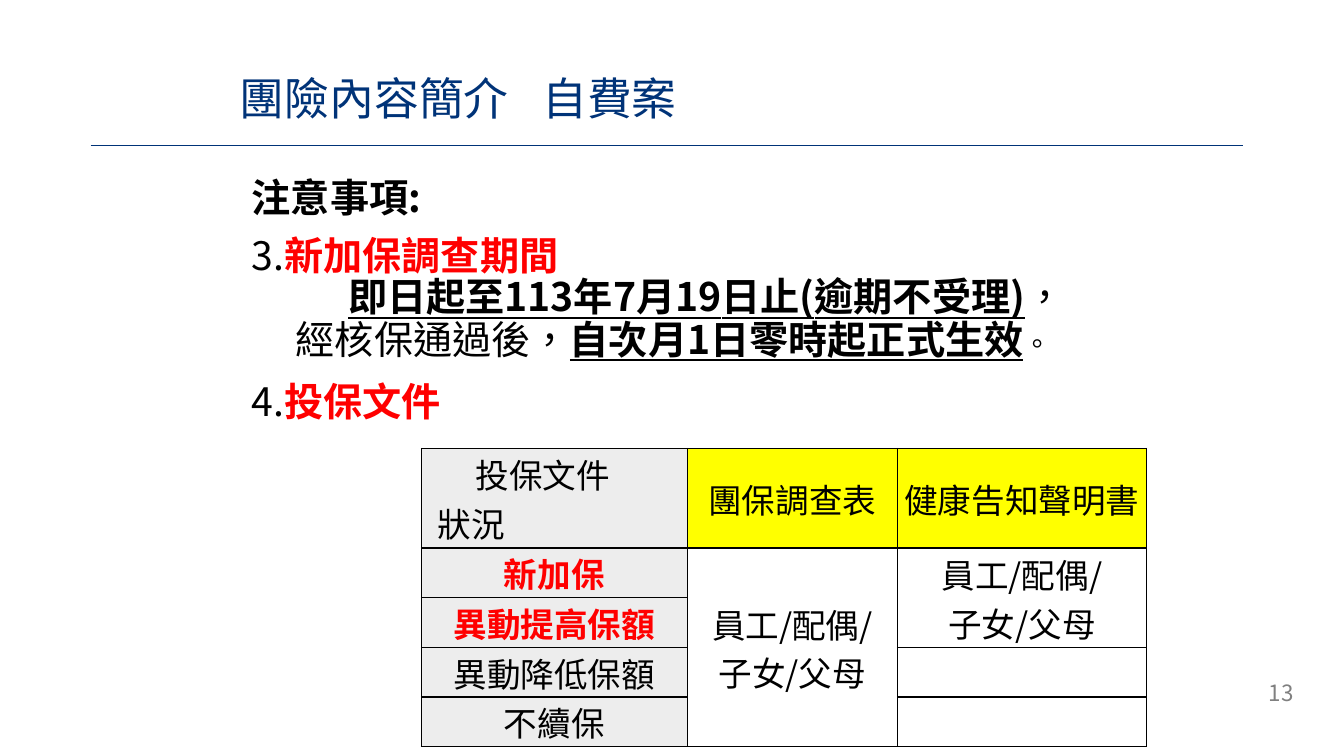
from dataclasses import dataclass

from pptx import Presentation
from pptx.dml.color import RGBColor
from pptx.enum import shapes, text
from pptx.oxml import ns, xmlchemy
from pptx.util import Pt


@dataclass(frozen=True)
class Theme:
    """Colours, face and type sizes of the slide."""
    face: str = "Noto Sans CJK SC"
    navy: str = "003378"
    black: str = "000000"
    red: str = "FF0000"
    grey: str = "808080"
    pale: str = "EDEDED"
    gold: str = "FFFF00"
    white: str = "FFFFFF"
    title: int = 32
    body: int = 28
    cell: int = 24
    small: int = 20
    page: int = 16


T = Theme()


@dataclass(frozen=True)
class Run:
    """A stretch of text in one style."""
    words: str
    size: float = T.body
    color: str = T.black
    bold: bool = False
    under: bool = False


@dataclass(frozen=True)
class Para:
    """A paragraph with its layout."""
    runs: tuple[Run, ...]
    left: float = 0
    hang: float = 0
    before: float = 0
    lines: float = 1.0
    align: text.PP_ALIGN = text.PP_ALIGN.LEFT
    tab: float = 0


@dataclass(frozen=True)
class Box:
    """A text box with its place and content."""
    left: float
    top: float
    width: float
    height: float
    paras: tuple[Para, ...]
    inset: float = 3.6
    anchor: text.MSO_ANCHOR = text.MSO_ANCHOR.TOP


@dataclass(frozen=True)
class Cell:
    """A table cell, with the number of rows it covers."""
    row: int
    col: int
    paras: tuple[Para, ...]
    fill: str
    span: int = 1


def assign(item, values: dict) -> None:
    """Set each named attribute on an item."""
    for name, value in values.items():
        setattr(item, name, value)


def child(node, tag: str, **attrs: str):
    """Append an XML element and return it."""
    new = xmlchemy.OxmlElement(tag)
    for name, value in attrs.items():
        new.set(name, value)
    node.append(new)
    return new


def write(frame, paras: tuple[Para, ...]) -> None:
    """Fill a text frame with paragraphs."""
    for i, para in enumerate(paras):
        item = frame.add_paragraph() if i else frame.paragraphs[0]
        assign(item, {"alignment": para.align, "line_spacing": para.lines,
                      "space_before": Pt(para.before)})
        props = item._p.get_or_add_pPr()
        props.set("marL", str(Pt(para.left)))
        props.set("indent", str(Pt(para.hang)))
        if para.tab:
            stops = child(props, "a:tabLst")
            child(stops, "a:tab", pos=str(Pt(para.tab)), algn="l")
        for part in para.runs:
            run = item.add_run()
            run.text = part.words
            assign(run.font, {"name": T.face, "size": Pt(part.size),
                              "bold": part.bold, "underline": part.under})
            run.font.color.rgb = RGBColor.from_string(part.color)
            style = run._r.get_or_add_rPr()
            style.set("lang", "zh-TW")
            style.find(ns.qn("a:latin")).addnext(
                child(style, "a:ea", typeface=T.face))


def draw(slide, box: Box) -> None:
    """Draw a text box."""
    place = map(Pt, (box.left, box.top, box.width, box.height))
    frame = slide.shapes.add_textbox(*place).text_frame
    assign(frame, {"word_wrap": True, "vertical_anchor": box.anchor,
                   "margin_top": Pt(box.inset)})
    write(frame, box.paras)


def rule(slide) -> None:
    """Draw the line under the title."""
    line = slide.shapes.add_connector(
        shapes.MSO_CONNECTOR.STRAIGHT, Pt(64.8), Pt(104), Pt(887.8), Pt(104))
    line.line.width = Pt(1)
    line.line.color.rgb = RGBColor.from_string(T.navy)
    child(line._element.spPr, "a:effectLst")


def paint(cell, fill: str) -> None:
    """Give a table cell its borders, insets and fill."""
    props = cell._tc.get_or_add_tcPr()
    for side in "LRTB":
        edge = child(props, f"a:ln{side}", w=str(Pt(1)))
        child(child(edge, "a:solidFill"), "a:srgbClr", val=T.black)
    assign(cell, {"vertical_anchor": text.MSO_ANCHOR.MIDDLE,
                  "margin_left": Pt(0.7), "margin_right": Pt(0.7),
                  "margin_top": Pt(0.7), "margin_bottom": Pt(0)})
    cell.fill.solid()
    cell.fill.fore_color.rgb = RGBColor.from_string(fill)


def grid(slide, cells: list[Cell]) -> None:
    """Draw the table of papers."""
    wide, high = (190, 150, 178), (71,) + (35.5,) * 4
    table = slide.shapes.add_table(
        len(high), len(wide), Pt(301), Pt(320.4),
        Pt(sum(wide)), Pt(sum(high))).table
    assign(table, {"first_row": False, "horz_banding": False})
    for col, size in zip(table.columns, wide):
        col.width = Pt(size)
    for row, size in zip(table.rows, high):
        row.height = Pt(size)
    for item in cells:
        first = table.cell(item.row, item.col)
        if item.span > 1:
            first.merge(table.cell(item.row + item.span - 1, item.col))
        for step in range(item.span):
            paint(table.cell(item.row + step, item.col), item.fill)
        write(first.text_frame, item.paras)


def mid(*lines: str, color: str = T.black, bold: bool = False) -> tuple[Para, ...]:
    """Make centred table lines."""
    return tuple(Para((Run(line, T.cell, color, bold),),
                      align=text.PP_ALIGN.CENTER) for line in lines)


def main() -> None:
    """Build and save the slide."""
    deck = Presentation()
    assign(deck, {"slide_width": Pt(960), "slide_height": Pt(540)})
    slide = deck.slides.add_slide(deck.slide_layouts[6])
    page = Para((Run("13", T.page, T.grey),), align=text.PP_ALIGN.CENTER)
    title = Para((Run("團險內容簡介\t自費案", T.title, T.navy),), tab=211)
    notes = (
        Para((Run("注意事項:", bold=True),), 18, -14.4, lines=0.9),
        Para((Run("3."), Run("新加保調查期間", color=T.red, bold=True)), 3.6,
             before=14, lines=0.8),
        Para((Run("即日起至113年7月19日止(逾期不受理)", bold=True, under=True),
              Run("，")), 72.4, lines=0.9),
        Para((Run("經核保通過後，"),
              Run("自次月1日零時起正式生效", bold=True, under=True),
              Run("。", T.small)), 35, lines=0.9),
        Para((Run("4."), Run("投保文件", color=T.red, bold=True)), 3.6,
             before=14, lines=0.9),
    )
    rule(slide)
    for box in (Box(887.4, 481.7, 55.4, 25.2, (page,)),
                Box(164.2, 47, 438.5, 35.3, (title,), 13.6,
                    text.MSO_ANCHOR.MIDDLE),
                Box(169.2, 123.8, 700.6, 197.3, notes)):
        draw(slide, box)
    head = (Para((Run("投保文件", T.cell),), 38), Para((Run("狀況", T.cell),), 11))
    who = mid("員工/配偶/", "子女/父母")
    cells = [Cell(0, 0, head, T.pale), Cell(0, 1, mid("團保調查表"), T.gold),
             Cell(0, 2, mid("健康告知聲明書"), T.gold),
             Cell(1, 1, who, T.white, 4), Cell(1, 2, who, T.white, 2),
             Cell(3, 2, (), T.white), Cell(4, 2, (), T.white)]
    for i, name in enumerate(("新加保", "異動提高保額", "異動降低保額", "不續保"), 1):
        hot = i < 3
        cells.append(Cell(i, 0, mid(name, color=T.red if hot else T.black, bold=hot),
                          T.pale))
    grid(slide, cells)
    deck.save("out.pptx")


if __name__ == "__main__":
    main()
